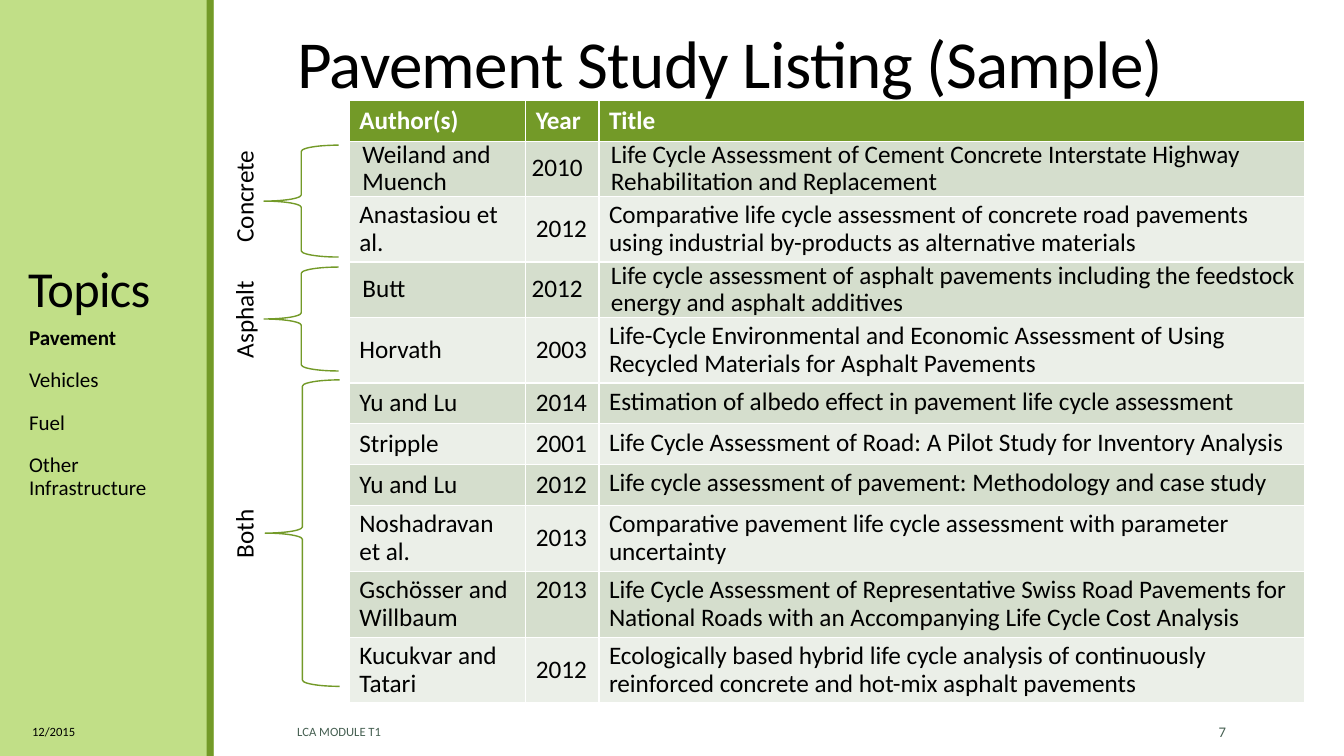
"""Build the pavement study listing slide."""
from dataclasses import dataclass
from typing import Optional

from pptx import Presentation
from pptx.dml.color import RGBColor
from pptx.enum.shapes import MSO_SHAPE as Shape
from pptx.enum.text import MSO_ANCHOR as Anchor, PP_ALIGN as Align
from pptx.util import Pt

BLACK = RGBColor(0x00, 0x00, 0x00)
WHITE = RGBColor(0xFF, 0xFF, 0xFF)
LIME = RGBColor(0xC1, 0xDF, 0x87)
GREEN = RGBColor(0x73, 0x9A, 0x28)
SLATE = RGBColor(0x45, 0x5F, 0x51)
SAGE = RGBColor(0xD5, 0xDE, 0xCD)
MIST = RGBColor(0xEB, 0xEF, 0xE8)
FONT = "Calibri"


@dataclass(frozen=True)
class Note:
    text: str
    x: float
    y: float
    w: float
    h: float
    size: float
    color: RGBColor = BLACK
    anchor: Anchor = Anchor.MIDDLE
    align: Align = Align.LEFT
    lead: float = 1.0
    kern: int = 0
    turn: int = 0
    wrap: bool = True


@dataclass(frozen=True)
class Group:
    name: str
    x: float
    y: float
    h: float
    mid: float
    w: float


@dataclass(frozen=True)
class Study:
    author: str
    year: str
    title: str
    high: float = 47
    tight: bool = False
    top: bool = False


NOTES = [
    Note("Topics", 13, 50.4, 117.4, 180, 36, anchor=Anchor.BOTTOM, lead=0.85, kern=-50),
    Note("Pavement Study Listing (Sample)", 205.2, 6.5, 691.2, 69.8, 48,
         anchor=Anchor.BOTTOM, lead=0.85, kern=-50),
    Note("7", 779.8, 508.3, 103, 28.8, 10.5, SLATE, align=Align.RIGHT),
    Note("LCA MODULE T1", 205.2, 508.3, 538.6, 28.8, 9, SLATE),
    Note("12/2015", 15.8, 508.3, 116.6, 28.8, 9),
]
TOPICS = ["Pavement", "Vehicles", "Fuel", "Other Infrastructure"]
GROUPS = [
    Group("Concrete", 188.6, 103.7, 79.9, 139.7, 81.4),
    Group("Asphalt", 188.6, 190.8, 74.2, 227.5, 70.6),
    Group("Both", 189.4, 271.4, 218.9, 380.9, 49.7),
]
HEADS = ("Author(s)", "Year", "Title")
WIDTHS = (126, 52.3, 504)
INDENTS = (9.36, 4.32, 8.64)
STUDIES = [
    Study("Weiland and Muench", "2010",
          "Life Cycle Assessment of Cement Concrete Interstate Highway "
          "Rehabilitation and Replacement", 39.4, tight=True),
    Study("Anastasiou et al.", "2012",
          "Comparative life cycle assessment of concrete road pavements "
          "using industrial by-products as alternative materials"),
    Study("Butt", "2012",
          "Life cycle assessment of asphalt pavements including the feedstock "
          "energy and asphalt additives", 39.4, tight=True),
    Study("Horvath", "2003",
          "Life-Cycle Environmental and Economic Assessment of Using "
          "Recycled Materials for Asphalt Pavements"),
    Study("Yu and Lu", "2014",
          "Estimation of albedo effect in pavement life cycle assessment", 29.2),
    Study("Stripple", "2001",
          "Life Cycle Assessment of Road: A Pilot Study for Inventory Analysis", 29.2),
    Study("Yu and Lu", "2012",
          "Life cycle assessment of pavement: Methodology and case study", 29.2),
    Study("Noshadravan et al.", "2013",
          "Comparative pavement life cycle assessment with parameter uncertainty"),
    Study("Gschösser and Willbaum", "2013",
          "Life Cycle Assessment of Representative Swiss Road Pavements for "
          "National Roads with an Accompanying Life Cycle Cost Analysis", top=True),
    Study("Kucukvar and Tatari", "2012",
          "Ecologically based hybrid life cycle analysis of continuously "
          "reinforced concrete and hot-mix asphalt pavements"),
]


def style(para, size: float, color: RGBColor, bold: bool = False, lead: float = 1.0) -> None:
    para.line_spacing = lead
    for run in para.runs:
        font = run.font
        font.name, font.size, font.bold = FONT, Pt(size), bold
        font.color.rgb = color


def add_note(slide, note: Note) -> None:
    box = slide.shapes.add_textbox(Pt(note.x), Pt(note.y), Pt(note.w), Pt(note.h))
    box.rotation = note.turn
    frame = box.text_frame
    frame.text = note.text
    frame.word_wrap = note.wrap
    frame.vertical_anchor = note.anchor
    para = frame.paragraphs[0]
    para.alignment = note.align
    style(para, note.size, note.color, lead=note.lead)
    if note.kern:
        para.runs[0].font._element.set("spc", str(note.kern))


def add_panel(slide, x: float, w: float, color: RGBColor) -> None:
    panel = slide.shapes.add_shape(Shape.RECTANGLE, Pt(x), Pt(0), Pt(w), Pt(540))
    panel.shadow.inherit = False
    panel.fill.solid()
    panel.fill.fore_color.rgb = color
    panel.line.fill.background()


def add_topics(slide) -> None:
    box = slide.shapes.add_textbox(Pt(13.7), Pt(230.4), Pt(117.4), Pt(266.4))
    frame = box.text_frame
    frame.word_wrap = True
    frame.text = "\n".join(TOPICS)
    for i, para in enumerate(frame.paragraphs):
        para.space_before, para.space_after = Pt(12 if i else 0), Pt(2)
        style(para, 15, BLACK, bold=i == 0, lead=0.9)


def add_group(slide, group: Group) -> None:
    brace = slide.shapes.add_shape(Shape.LEFT_BRACE, Pt(group.x), Pt(group.y),
                                   Pt(53.3), Pt(group.h))
    brace.shadow.inherit = False
    brace.fill.background()
    brace.line.color.rgb = GREEN
    brace.line.width = Pt(1)
    add_note(slide, Note(group.name, 174 - group.w / 2, group.mid - 14.4, group.w, 28.8,
                         18, anchor=Anchor.TOP, turn=270, wrap=False))


def fill_cell(cell, text: str, fill: RGBColor, color: RGBColor, bold: bool, lead: float) -> None:
    cell.text = text
    cell.fill.solid()
    cell.fill.fore_color.rgb = fill
    style(cell.text_frame.paragraphs[0], 18, color, bold, lead)


def add_table(slide) -> None:
    highs = [29.2] + [study.high for study in STUDIES]
    grid = slide.shapes.add_table(len(highs), len(HEADS), Pt(249.5), Pt(71.6),
                                  Pt(sum(WIDTHS)), Pt(sum(highs))).table
    for col, width in zip(grid.columns, WIDTHS):
        col.width = Pt(width)
    for row, high in zip(grid.rows, highs):
        row.height = Pt(high)
    for c, head in enumerate(HEADS):
        fill_cell(grid.cell(0, c), head, GREEN, WHITE, True, 1.0)
    for r, study in enumerate(STUDIES, 1):
        for c, text in enumerate((study.author, study.year, study.title)):
            cell = grid.cell(r, c)
            fill_cell(cell, text, SAGE if r % 2 else MIST, BLACK, False, 0.9)
            cell.vertical_anchor = Anchor.TOP if c == 2 else Anchor.MIDDLE
            if study.top:
                cell.vertical_anchor = Anchor.TOP
            if study.tight:
                cell.margin_top = cell.margin_bottom = cell.margin_right = Pt(0)
                cell.margin_left = Pt(INDENTS[c])
                if c == 2:
                    cell.vertical_anchor = Anchor.BOTTOM


def main() -> None:
    deck = Presentation()
    deck.slide_width, deck.slide_height = Pt(960), Pt(540)
    slide = deck.slides.add_slide(deck.slide_layouts[6])
    add_panel(slide, -2.2, 154.8, LIME)
    add_panel(slide, 147.6, 5, GREEN)
    add_topics(slide)
    for note in NOTES:
        add_note(slide, note)
    add_table(slide)
    for group in GROUPS:
        add_group(slide, group)
    deck.save("out.pptx")


if __name__ == "__main__":
    main()
